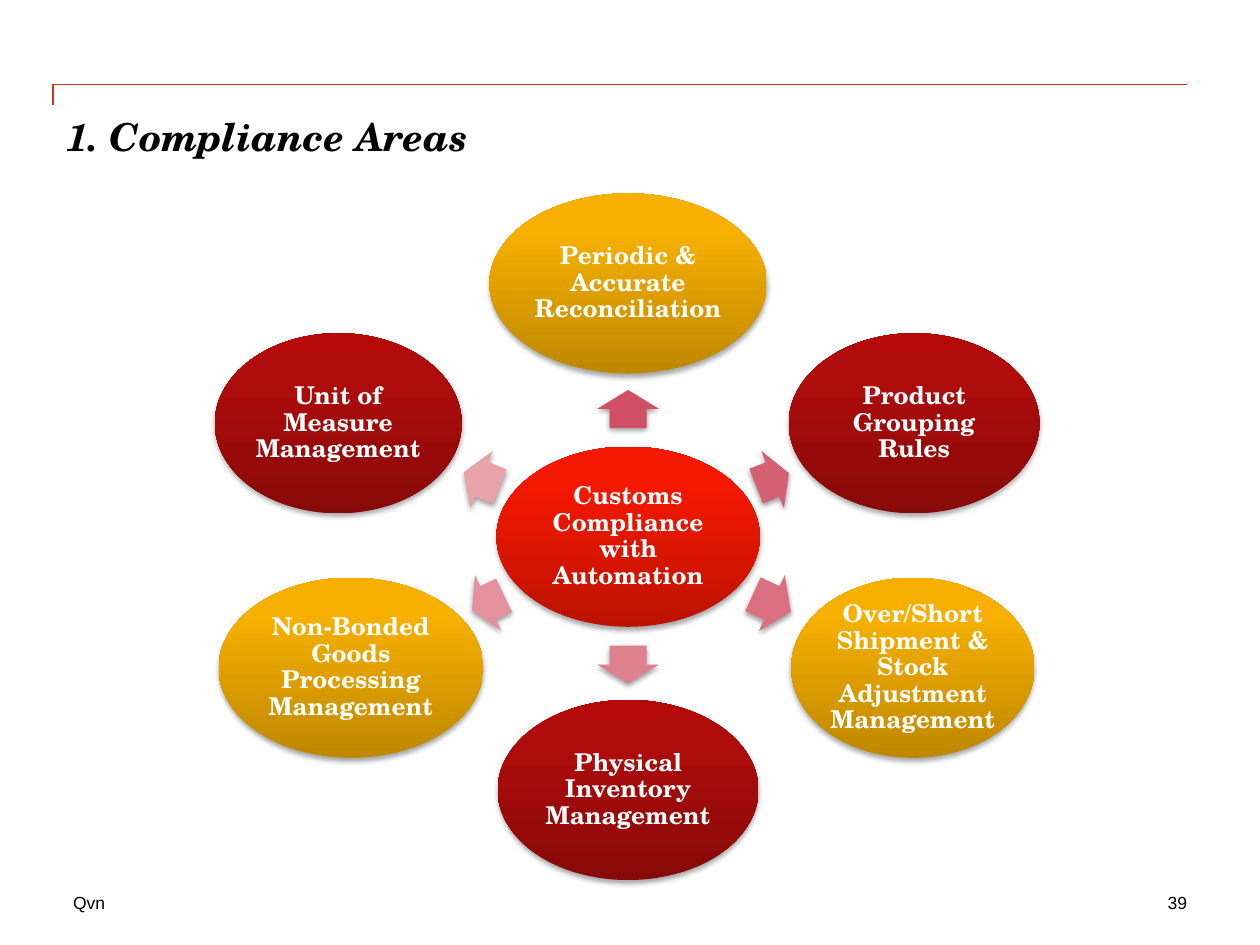
from collections import namedtuple
from copy import deepcopy
from dataclasses import dataclass
from math import atan2, degrees

from lxml import etree
from pptx import Presentation
from pptx.dml.color import RGBColor
from pptx.enum.shapes import MSO_CONNECTOR, MSO_SHAPE
from pptx.enum.text import MSO_ANCHOR, PP_ALIGN
from pptx.oxml.ns import qn
from pptx.util import Inches, Pt

ELLIPSE, ARROW = MSO_SHAPE.OVAL, MSO_SHAPE.RIGHT_ARROW
ELBOW = MSO_CONNECTOR.ELBOW
LEFT, CENTER, RIGHT = PP_ALIGN.LEFT, PP_ALIGN.CENTER, PP_ALIGN.RIGHT
TOP, MIDDLE = MSO_ANCHOR.TOP, MSO_ANCHOR.MIDDLE

Box = namedtuple("Box", "left top width height")
Node = namedtuple("Node", "text dx dy width colors arrow_length")


@dataclass(frozen=True)
class Theme:
    """Colours, fonts and type sizes of the slide."""
    heading_font: str = "TeX Gyre Schola"
    footer_font: str = "Arial"
    title_size: int = 22
    node_size: int = 14
    footer_size: int = 10
    ink: str = "000000"
    node_ink: str = "FFFFFF"
    rule: str = "E0301E"
    hub: tuple = ("BD1201", "F51801", "F71700")
    gold: tuple = ("BE8800", "F7B000", "F8B100")
    maroon: tuple = ("880909", "B10C0C", "B50909")
    first_arrow: str = "D14F65"
    last_arrow: str = "E7A2AA"


THEME = Theme()
GRADIENT_STOPS = (0, 0.8, 1)
NODE_HEIGHT = 1.43
ARROW_WIDTH = 0.49
ARROW_DISTANCE = 0.505
HUB = Node("Customs Compliance with Automation", 0, 0, 2.09, THEME.hub, 0)
NODES = (
    Node("Periodic & Accurate\nReconciliation", 0, -2.01, 2.2, THEME.gold, 0.3),
    Node("Product Grouping Rules", 2.27, -0.9, 1.99, THEME.maroon, 0.28),
    Node("Over/Short Shipment & Stock Adjustment Management",
         2.26, 1.04, 1.93, THEME.gold, 0.33),
    Node("Physical Inventory Management", 0, 2.01, 2.07, THEME.maroon, 0.3),
    Node("Non-Bonded Goods Processing Management",
         -2.2, 1.04, 2.1, THEME.gold, 0.28),
    Node("Unit of Measure Management", -2.3, -0.9, 1.96, THEME.maroon, 0.31),
)


def place(box):
    """Return the box as lengths."""
    return [Inches(value) for value in box]


def write(text_frame, text, font, size, color, align=LEFT, anchor=TOP,
          inset=0, bold=False, italic=False, spacing=None):
    """Fill a text frame and format all of its runs alike."""
    text_frame.text = text
    text_frame.word_wrap = True
    text_frame.vertical_anchor = anchor
    text_frame.margin_left = text_frame.margin_right = Inches(inset)
    text_frame.margin_top = text_frame.margin_bottom = Inches(inset)
    for paragraph in text_frame.paragraphs:
        paragraph.alignment = align
        paragraph.line_spacing = spacing
        for run in paragraph.runs:
            run.font.name = font
            run.font.size = Pt(size)
            run.font.bold = bold
            run.font.italic = italic
            run.font.color.rgb = RGBColor.from_string(color)


def add_shadow(shape, opacity, distance):
    """Give a shape a soft shadow that falls straight down."""
    shape.shadow.inherit = False
    effects = shape._element.spPr.find(qn("a:effectLst"))
    shadow = etree.SubElement(
        effects, qn("a:outerShdw"), blurRad=str(Pt(3.1)),
        dist=str(Pt(distance)), dir="5400000", rotWithShape="0")
    color = etree.SubElement(shadow, qn("a:srgbClr"), val="000000")
    etree.SubElement(color, qn("a:alpha"), val=str(opacity * 1000))


def fill_gradient(shape, colors):
    """Fill a shape with three colours from bottom to top."""
    shape.fill.gradient()
    shape.fill.gradient_angle = 90
    stop_list = shape._element.spPr.find(".//" + qn("a:gsLst"))
    stop_list.append(deepcopy(stop_list[-1]))
    for stop, position, color in zip(
            shape.fill.gradient_stops, GRADIENT_STOPS, colors):
        stop.position = position
        stop.color.rgb = RGBColor.from_string(color)


def blend(start, end, share):
    """Return the colour that lies at a share of the way between two."""
    pairs = zip(RGBColor.from_string(start), RGBColor.from_string(end))
    return RGBColor(*(round(a + (b - a) * share) for a, b in pairs))


def add_node(slide, center, node):
    """Add one labelled ellipse at its offset from the center."""
    box = Box(center[0] + node.dx - node.width / 2,
              center[1] + node.dy - NODE_HEIGHT / 2, node.width, NODE_HEIGHT)
    shape = slide.shapes.add_shape(ELLIPSE, *place(box))
    fill_gradient(shape, node.colors)
    shape.line.fill.background()
    add_shadow(shape, 35, 1.8)
    write(shape.text_frame, node.text, THEME.heading_font, THEME.node_size,
          THEME.node_ink, CENTER, MIDDLE, 0.02, bold=True, spacing=0.9)


def add_arrow(slide, center, node, color):
    """Add the arrow that points from the center to a node."""
    box = Box(center[0] + node.dx * ARROW_DISTANCE - node.arrow_length / 2,
              center[1] + node.dy * ARROW_DISTANCE - ARROW_WIDTH / 2,
              node.arrow_length, ARROW_WIDTH)
    shape = slide.shapes.add_shape(ARROW, *place(box))
    shape.adjustments[0], shape.adjustments[1] = 0.6, 0.5
    shape.rotation = degrees(atan2(node.dy, node.dx)) % 360
    shape.fill.solid()
    shape.fill.fore_color.rgb = color
    shape.line.fill.background()
    add_shadow(shape, 38, 1.6)


def add_radial_diagram(slide, box):
    """Add the hub, and the arrows and nodes around it."""
    center = (box.left + box.width / 2, box.top + box.height / 2)
    add_node(slide, center, HUB)
    for index, node in enumerate(NODES):
        share = index / (len(NODES) - 1)
        color = blend(THEME.first_arrow, THEME.last_arrow, share)
        add_arrow(slide, center, node, color)
        add_node(slide, center, node)


def add_header_rule(slide, box):
    """Add the bent line along the top and left of the box."""
    rule = slide.shapes.add_connector(
        ELBOW, Inches(box.left + box.width), Inches(box.top),
        Inches(box.left), Inches(box.top + box.height))
    properties = rule._element.spPr
    properties.find(qn("a:prstGeom")).set("prst", "bentConnector2")
    rule.line.color.rgb = RGBColor.from_string(THEME.rule)
    rule.line.width = Pt(1)
    etree.SubElement(properties, qn("a:effectLst"))


def set_title(slide, box, text):
    """Place and format the title."""
    title = slide.shapes.title
    title.left, title.top, title.width, title.height = place(box)
    write(title.text_frame, text, THEME.heading_font, THEME.title_size,
          THEME.ink, bold=True, italic=True)


def add_footer(slide, box, company, number):
    """Add the company at the left and the page number at the right."""
    half = box.width / 2
    for left, text, align in ((box.left, company, LEFT),
                              (box.left + half, number, RIGHT)):
        part = Box(left, box.top, half, box.height)
        text_box = slide.shapes.add_textbox(*place(part))
        write(text_box.text_frame, text, THEME.footer_font,
              THEME.footer_size, THEME.ink, align)


def main():
    """Build and save the slide."""
    presentation = Presentation()
    presentation.slide_width, presentation.slide_height = Inches(10), Inches(7.5)
    slide = presentation.slides.add_slide(presentation.slide_layouts[5])
    add_header_rule(slide, Box(0.42, 0.67, 9, 0.16))
    set_title(slide, Box(0.53, 0.9, 8.94, 0.88), "1. Compliance Areas")
    add_radial_diagram(slide, Box(1.7, 1.53, 6.57, 5.46))
    add_footer(slide, Box(0.58, 7.08, 8.84, 0.17), "Qvn", "39")
    presentation.save("out.pptx")


if __name__ == "__main__":
    main()
